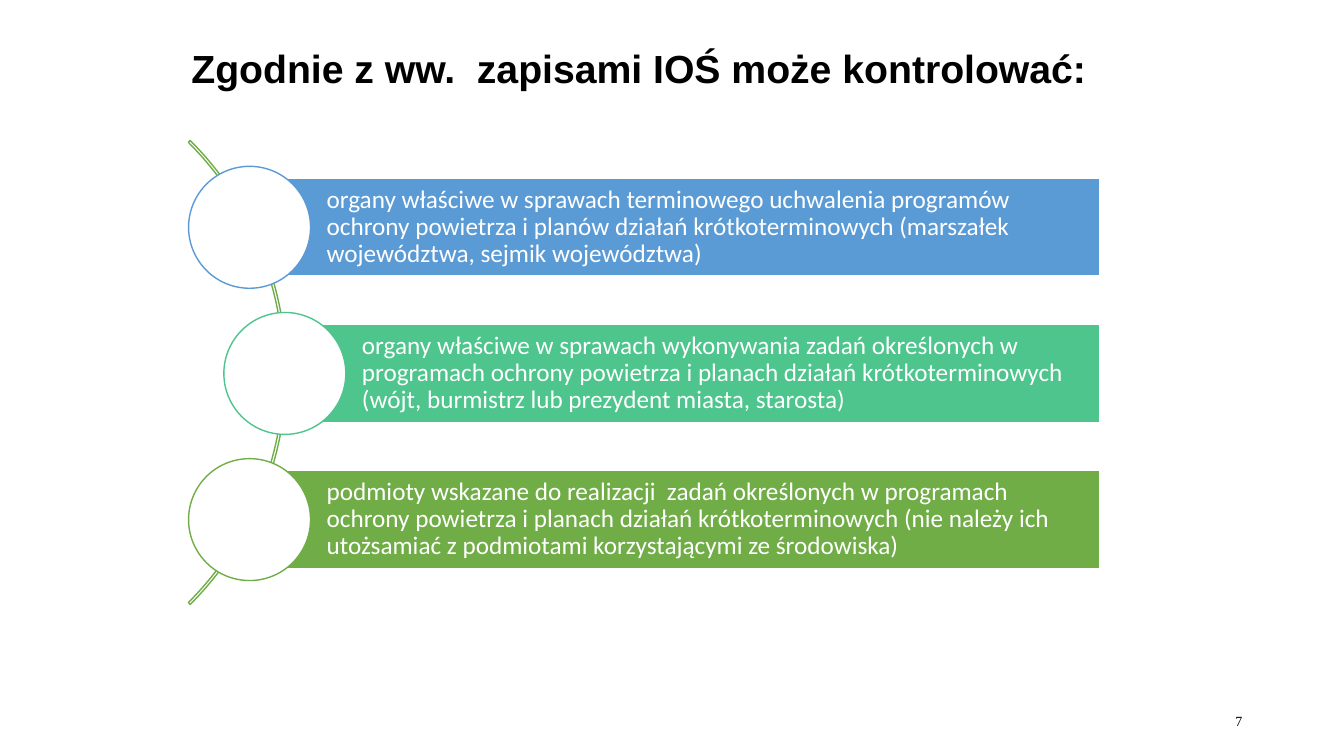
from dataclasses import dataclass

from pptx import Presentation
from pptx.dml.color import RGBColor
from pptx.enum.shapes import MSO_SHAPE
from pptx.enum.text import MSO_ANCHOR, PP_ALIGN
from pptx.util import Inches, Pt


@dataclass(frozen=True)
class Theme:
    black: str = "000000"
    white: str = "FFFFFF"
    blue: str = "5B9BD5"
    teal: str = "4DC58D"
    green: str = "70AD47"
    head: int = 28
    body: int = 18
    small: int = 10
    line: int = 1


def write(frame, text, font, size, color, bold=False, align=PP_ALIGN.LEFT,
          anchor=MSO_ANCHOR.TOP, left=0.1, pad=0.05, right=0.1, lead=1.0):
    frame.word_wrap = True
    frame.vertical_anchor = anchor
    frame.margin_left = Inches(left)
    frame.margin_right = Inches(right)
    frame.margin_top = frame.margin_bottom = Inches(pad)
    para = frame.paragraphs[0]
    para.alignment = align
    para.line_spacing = lead
    run = para.add_run()
    run.text = text
    run.font.name = font
    run.font.size = Pt(size)
    run.font.bold = bold
    run.font.color.rgb = RGBColor.from_string(color)


class Page:
    def __init__(self, slide, theme):
        self.slide = slide
        self.theme = theme

    def label(self, box, text, **form):
        area = self.slide.shapes.add_textbox(*map(Inches, box))
        write(area.text_frame, text, **form)

    def shape(self, kind, box, line, fill=None):
        item = self.slide.shapes.add_shape(kind, *map(Inches, box))
        item.shadow.inherit = False
        if fill:
            item.fill.solid()
            item.fill.fore_color.rgb = RGBColor.from_string(fill)
        else:
            item.fill.background()
        item.line.color.rgb = RGBColor.from_string(line)
        item.line.width = Pt(self.theme.line)
        return item

    def arc(self, box, color):
        item = self.shape(MSO_SHAPE.BLOCK_ARC, box, color)
        for index, value in enumerate((189, 27, 0.004)):
            item.adjustments[index] = value

    def bar(self, box, color, text):
        item = self.shape(MSO_SHAPE.RECTANGLE, box, self.theme.white, color)
        write(item.text_frame, text, font="Calibri", size=self.theme.body,
              color=self.theme.white, anchor=MSO_ANCHOR.MIDDLE,
              left=0.77, right=0.05, lead=0.9)

    def disc(self, box, color):
        self.shape(MSO_SHAPE.OVAL, box, color, self.theme.white)


def main():
    deck = Presentation()
    deck.slide_width = Inches(13.33)
    deck.slide_height = Inches(7.5)
    theme = Theme()
    page = Page(deck.slides.add_slide(deck.slide_layouts[6]), theme)

    page.label((9.42, 6.95, 3, 0.4), "7", font="Times New Roman",
               size=theme.small, color=theme.black, align=PP_ALIGN.RIGHT,
               anchor=MSO_ANCHOR.MIDDLE)
    page.label((1.8, 0.39, 9.35, 1.48),
               "Zgodnie z ww.  zapisami IOŚ może kontrolować:",
               font="Arial", size=theme.head, color=theme.black, bold=True)
    page.arc((-3.67, 0.44, 6.51, 6.51), theme.green)

    groups = (
        (1.87, theme.blue,
         "organy właściwe w sprawach terminowego uchwalenia programów "
         "ochrony powietrza i planów działań krótkoterminowych "
         "(marszałek województwa, sejmik województwa)"),
        (2.22, theme.teal,
         "organy właściwe w sprawach wykonywania zadań określonych w "
         "programach ochrony powietrza i planach działań krótkoterminowych "
         "(wójt, burmistrz lub prezydent miasta, starosta)"),
        (1.87, theme.green,
         "podmioty wskazane do realizacji  zadań określonych w programach "
         "ochrony powietrza i planach działań krótkoterminowych "
         "(nie należy ich utożsamiać z podmiotami korzystającymi ze "
         "środowiska)"),
    )
    size, tall, edge, top, step = 1.21, 0.97, 10.91, 1.65, 1.45
    for index, (left, color, text) in enumerate(groups):
        high = top + index * step
        start = left + 0.6
        page.bar((start, high + (size - tall) / 2, edge - start, tall),
                 color, text)
        page.disc((left, high, size, size), color)

    deck.save("out.pptx")


if __name__ == "__main__":
    main()
